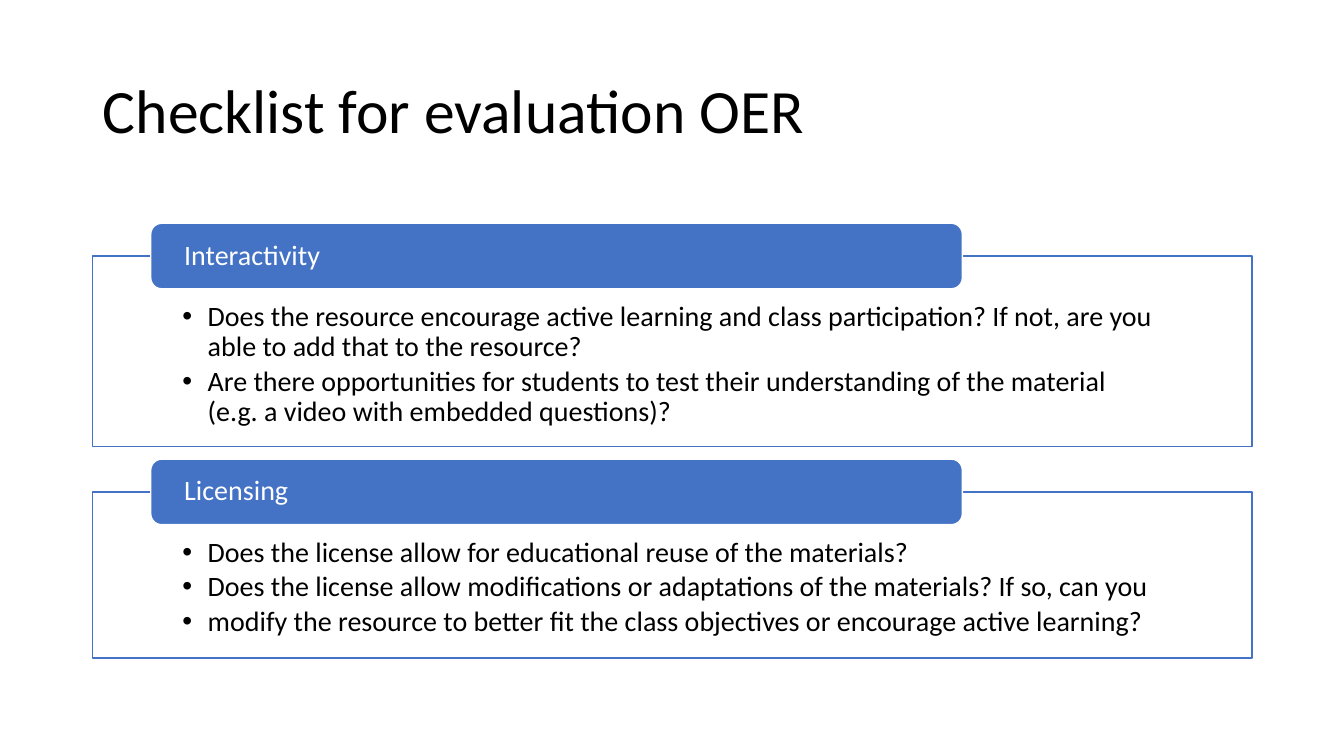
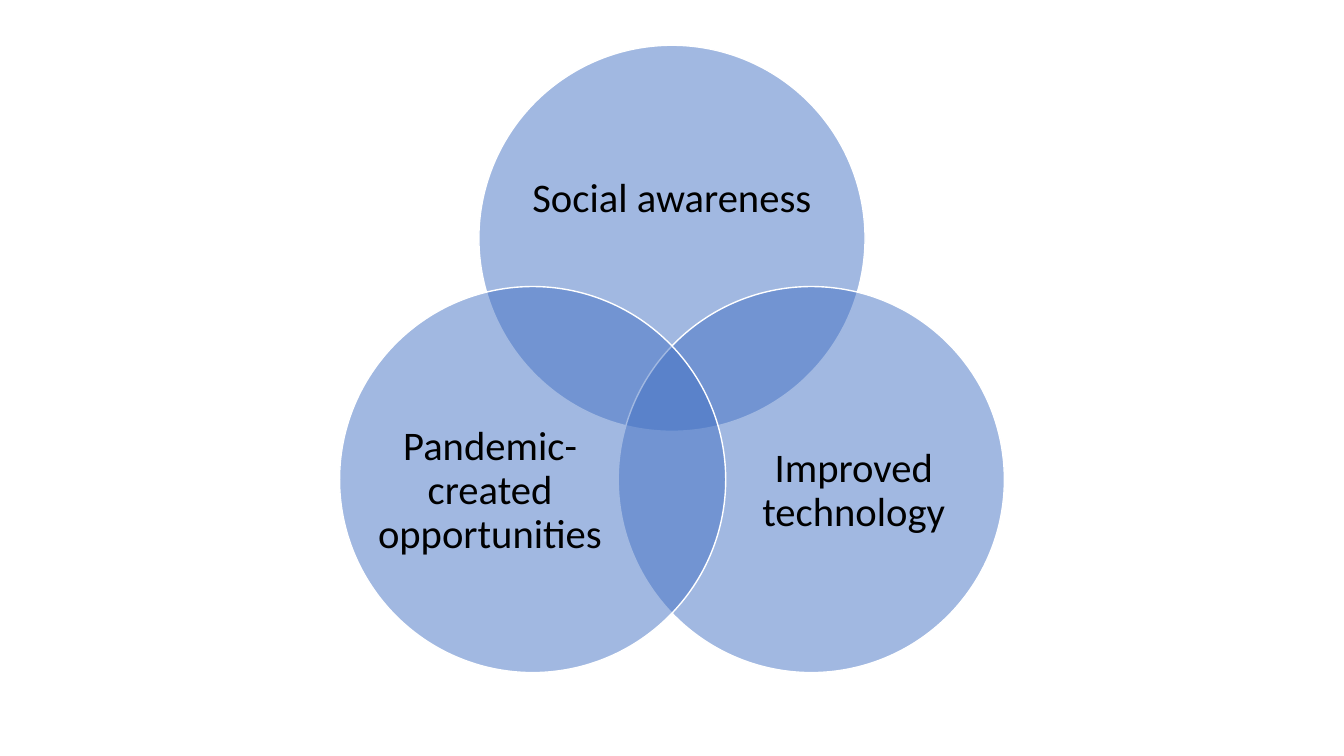
import math
import pptx
import pptx.dml.color
import pptx.enum.shapes
import pptx.enum.text
import pptx.oxml
import pptx.oxml.ns
import pptx.util
from lxml import etree

Inches = pptx.util.Inches
Pt = pptx.util.Pt
RGBColor = pptx.dml.color.RGBColor
Shape = pptx.enum.shapes.MSO_SHAPE
Align = pptx.enum.text.PP_ALIGN
Anchor = pptx.enum.text.MSO_ANCHOR
qn = pptx.oxml.ns.qn

COLORS = {"accent": "4472C4", "paper": "FFFFFF", "ink": "000000"}
FONT = "Calibri"
WIDTH, HEIGHT = 13.33, 7.5
MARGIN = 0.92
CONTENT_WIDTH = 11.5


def add_outlined_shape(slide, preset, box, fill, line, opacity=100):
    shape = slide.shapes.add_shape(preset, *[Inches(length) for length in box])
    shape.shadow.inherit = False
    shape.fill.solid()
    shape.fill.fore_color.rgb = RGBColor.from_string(COLORS[fill])
    shape.line.color.rgb = RGBColor.from_string(COLORS[line])
    shape.line.width = Pt(1)
    if opacity < 100:
        color = shape.fill._xPr.find(qn("a:solidFill"))[0]
        etree.SubElement(color, qn("a:alpha")).set("val", str(opacity * 1000))
    return shape


def write_text(shape, lines, size, color, insets, align=Align.LEFT,
               anchor=Anchor.MIDDLE, bullets=False):
    frame = shape.text_frame
    frame.word_wrap = True
    frame.auto_size = pptx.enum.text.MSO_AUTO_SIZE.NONE
    frame.vertical_anchor = anchor
    frame.margin_left = frame.margin_right = Inches(insets[0])
    frame.margin_top, frame.margin_bottom = Inches(insets[1]), Inches(insets[2])
    frame.text = "\n".join(lines)
    for paragraph in frame.paragraphs:
        paragraph.alignment = align
        paragraph.line_spacing = 0.9
        paragraph.font.name = FONT
        paragraph.font.size = Pt(size)
        paragraph.font.color.rgb = RGBColor.from_string(COLORS[color])
        if bullets:
            paragraph.space_after = Pt(3)
            properties = paragraph._p.get_or_add_pPr()
            properties.set("marL", str(Inches(0.25)))
            properties.set("indent", str(-Inches(0.25)))
            bullet_font = etree.SubElement(properties, qn("a:buFont"))
            bullet_font.set("typeface", "Arial")
            etree.SubElement(properties, qn("a:buChar")).set("char", "•")
            properties.append(properties.find(qn("a:defRPr")))


presentation = pptx.Presentation()
presentation.slide_width = Inches(WIDTH)
presentation.slide_height = Inches(HEIGHT)
title_only, blank = presentation.slide_layouts[5], presentation.slide_layouts[6]

checklist_slide = presentation.slides.add_slide(title_only)
title = checklist_slide.shapes.title
title.left, title.top = Inches(MARGIN), Inches(0.4)
title.width, title.height = Inches(CONTENT_WIDTH), Inches(1.45)
write_text(title, ["Checklist for evaluation OER"], 44, "ink", (0.1, 0.05, 0.05))

HEADER_HEIGHT = 0.65
PANEL_GAP = 0.45
checklist = [
    ("Interactivity", 1.89, [
        "Does the resource encourage active learning and class participation? "
        "If not, are you able to add that to the resource?",
        "Are there opportunities for students to test their understanding of "
        "the material (e.g. a video with embedded questions)?",
    ]),
    ("Licensing", 1.65, [
        "Does the license allow for educational reuse of the materials?",
        "Does the license allow modifications or adaptations of the materials? "
        "If so, can you",
        "modify the resource to better fit the class objectives or encourage "
        "active learning?",
    ]),
]
panel_top = 2.54
for heading, panel_height, questions in checklist:
    panel = add_outlined_shape(
        checklist_slide, Shape.RECTANGLE,
        (MARGIN, panel_top, CONTENT_WIDTH, panel_height), "paper", "accent", 90)
    write_text(panel, questions, 20, "ink", (0.89, 0.46, 0.16),
               anchor=Anchor.TOP, bullets=True)
    header = add_outlined_shape(
        checklist_slide, Shape.ROUNDED_RECTANGLE,
        (MARGIN + 0.05 * CONTENT_WIDTH, panel_top - HEADER_HEIGHT / 2,
         0.7 * CONTENT_WIDTH, HEADER_HEIGHT), "accent", "paper")
    write_text(header, [heading], 20, "paper", (0.3, 0, 0))
    panel_top += panel_height + PANEL_GAP

venn_slide = presentation.slides.add_slide(blank)
DIAMETER = 3.83
ORBIT = DIAMETER * 5 / 12
CENTER_X, CENTER_Y = WIDTH / 2, 3.96
circles = [
    ("Social awareness", -90, (0, -0.1), (2.81, 1.72)),
    ("Improved technology", 30, (0.11, 0.03), (2.3, 2.11)),
    ("Pandemic-created opportunities", 150, (-0.11, 0.03), (2.3, 2.11)),
]
for label, degrees, (shift_x, shift_y), (label_width, label_height) in circles:
    x = CENTER_X + ORBIT * math.cos(math.radians(degrees))
    y = CENTER_Y + ORBIT * math.sin(math.radians(degrees))
    add_outlined_shape(
        venn_slide, Shape.OVAL,
        (x - DIAMETER / 2, y - DIAMETER / 2, DIAMETER, DIAMETER),
        "accent", "paper", 50)
    label_x, label_y = x + shift_x * DIAMETER, y + shift_y * DIAMETER
    label_box = venn_slide.shapes.add_textbox(
        Inches(label_x - label_width / 2), Inches(label_y - label_height / 2),
        Inches(label_width), Inches(label_height))
    write_text(label_box, [label], 29, "ink", (0, 0, 0), align=Align.CENTER)

presentation.save("out.pptx")
